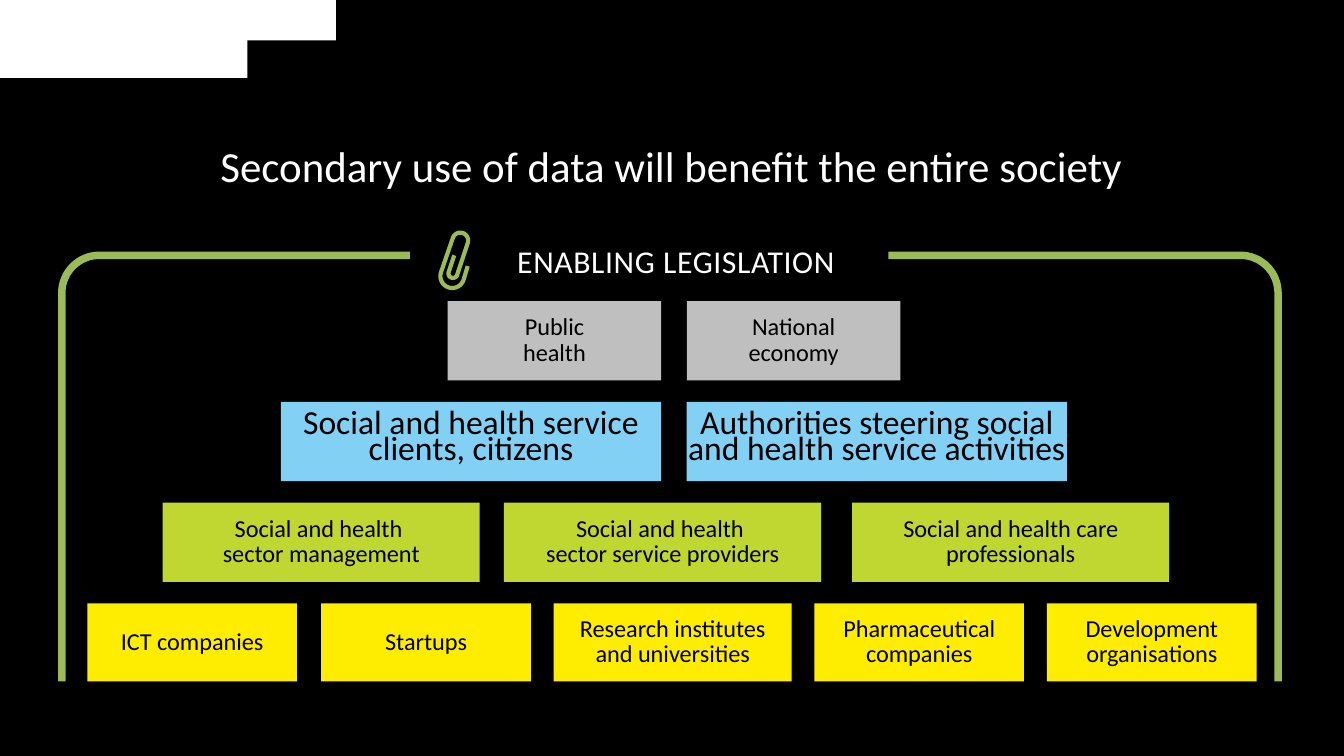
import math

from pptx import Presentation
from pptx import util as u
from pptx.dml.color import RGBColor
from pptx.enum import shapes, text

FONT = "Calibri"
BLACK, WHITE, FRAME_GREEN = "000000", "FFFFFF", "9BBB59"
ROW_PITCH = 0.75
ROWS = [
    ("BFBFBF", 13, 0.59, [(3.33, 1.59, "Public\nhealth"),
                          (5.11, 1.59, "National\neconomy")]),
    ("83D0F5", 18, 0.59, [(2.09, 2.83, "Social and health service\nclients, citizens"),
                          (5.11, 2.83, "Authorities steering social\nand health service activities")]),
    ("BFD730", 13, 0.59, [(1.21, 2.36, "Social and health \nsector management"),
                          (3.75, 2.36, "Social and health \nsector service providers"),
                          (6.34, 2.36, "Social and health care\nprofessionals")]),
    ("FFED00", 13, 0.58, [(0.65, 1.56, "ICT companies"),
                          (2.39, 1.56, "Startups"),
                          (4.12, 1.77, "Research institutes\nand universities"),
                          (6.06, 1.56, "Pharmaceutical companies"),
                          (7.79, 1.56, "Development\norganisations")]),
]


def colour(hex_string):
    return RGBColor.from_string(hex_string)


def inches(*lengths):
    return [u.Inches(length) for length in lengths]


def write(frame, wording, size, ink, line_spacing=None, insets=(0, 0),
          anchor=text.MSO_ANCHOR.MIDDLE):
    frame.word_wrap = True
    frame.auto_size = text.MSO_AUTO_SIZE.NONE
    frame.vertical_anchor = anchor
    frame.margin_left = frame.margin_right = u.Inches(insets[0])
    frame.margin_top = frame.margin_bottom = u.Inches(insets[1])
    paragraph = frame.paragraphs[0]
    paragraph.alignment = text.PP_ALIGN.CENTER
    if line_spacing:
        paragraph.line_spacing = u.Pt(line_spacing)
    for index, line in enumerate(wording.split("\n")):
        if index:
            paragraph.add_line_break()
        run = paragraph.add_run()
        run.text = line
        run.font.name = FONT
        run.font.size = u.Pt(size)
        run.font.color.rgb = colour(ink)
    return paragraph


def add_block(slide, left, top, width, height, fill):
    block = slide.shapes.add_shape(shapes.MSO_SHAPE.RECTANGLE,
                                   *inches(left, top, width, height))
    block.shadow.inherit = False
    block.fill.solid()
    block.fill.fore_color.rgb = colour(fill)
    block.line.fill.background()
    return block


def add_stroke(slide, points, weight):
    start, *rest = [inches(*point) for point in points]
    builder = slide.shapes.build_freeform(*start)
    builder.add_line_segments(rest, close=False)
    stroke = builder.convert_to_shape()
    stroke.shadow.inherit = False
    stroke.fill.background()
    stroke.line.color.rgb = colour(FRAME_GREEN)
    stroke.line.width = u.Pt(weight)


def arc(centre_x, centre_y, radius, start, sweep, steps=16):
    angles = [start + sweep * step / steps for step in range(steps + 1)]
    return [(centre_x + radius * math.cos(a), centre_y + radius * math.sin(a))
            for a in angles]


def half_turn(start, end):
    (x1, y1), (x2, y2) = start, end
    return arc((x1 + x2) / 2, (y1 + y2) / 2, math.dist(start, end) / 2,
               math.atan2(y1 - y2, x1 - x2), math.pi)


def add_header(slide, left, top, width, height):
    add_block(slide, left, top, width, height, WHITE)
    add_block(slide, left + 1.84, top + 0.3, width - 1.84, height - 0.3, BLACK)


def add_title(slide, left, top, width, height):
    title = slide.shapes.title
    title.left, title.top, title.width, title.height = inches(left, top, width, height)
    write(title.text_frame, "Secondary use of data will benefit the entire society",
          23, WHITE, 25.5, (0.07, 0.04), text.MSO_ANCHOR.TOP)


def add_legislation_frame(slide, left, top, width, height, gap_left, gap_right):
    radius = 0.28
    right, bottom = left + width, top + height
    corner_y = top + radius
    left_corner = arc(left + radius, corner_y, radius, -math.pi / 2, -math.pi / 2)
    right_corner = arc(right - radius, corner_y, radius, -math.pi / 2, math.pi / 2)
    add_stroke(slide, [(gap_left, top), *left_corner, (left, bottom)], 4)
    add_stroke(slide, [(gap_right, top), *right_corner, (right, bottom)], 4)


def add_legislation_heading(slide, left, top, width, height):
    heading = slide.shapes.add_textbox(*inches(left, top, width, height))
    paragraph = write(heading.text_frame, "ENABLING LEGISLATION", 17, WHITE,
                      insets=(0.1, 0.05), anchor=text.MSO_ANCHOR.TOP)
    paragraph.runs[0].font._element.set("spc", "30")


def add_paperclip(slide, left, top):
    turns = [((0.2, 0.37), (0.03, 0.32)),
             ((0.12, 0.06), (0.23, 0.1)),
             ((0.15, 0.34), (0.09, 0.31))]
    wire = [(0.23, 0.27)]
    for start, end in turns:
        wire += half_turn(start, end)
    wire.append((0.13, 0.19))
    add_stroke(slide, [(left + x, top + y) for x, y in wire], 2.25)


def add_beneficiaries(slide, top):
    for index, (fill, size, height, boxes) in enumerate(ROWS):
        for left, width, beneficiary in boxes:
            block = add_block(slide, left, top + index * ROW_PITCH, width, height, fill)
            write(block.text_frame, beneficiary, size, BLACK, 13.5)


def main():
    deck = Presentation()
    deck.slide_width = u.Inches(10)
    deck.slide_height = deck.slide_width * 9 // 16
    slide = deck.slides.add_slide(deck.slide_layouts[5])
    slide.background.fill.solid()
    slide.background.fill.fore_color.rgb = colour(BLACK)
    add_header(slide, 0, 0, 2.5, 0.58)
    add_title(slide, 0.53, 1.03, 8.94, 0.44)
    add_legislation_frame(slide, 0.46, 1.9, 9.05, 3.17, 3.05, 6.61)
    add_legislation_heading(slide, 2.24, 1.75, 5.58, 0.39)
    add_paperclip(slide, 3.25, 1.71)
    add_beneficiaries(slide, 2.24)
    deck.save("out.pptx")


if __name__ == "__main__":
    main()
